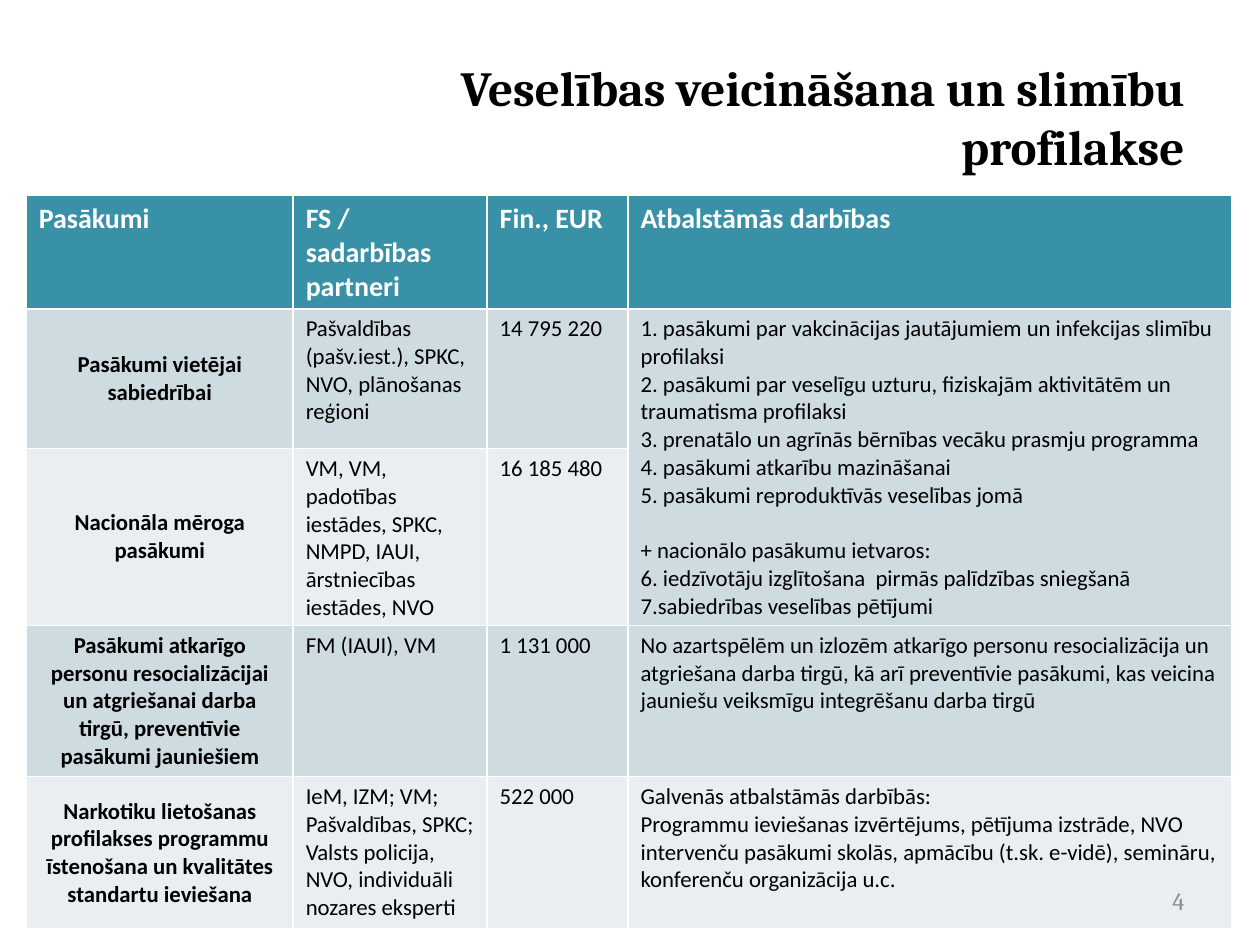
import pptx
import pptx.util
import pptx.dml.color
import pptx.enum.text

Cm = pptx.util.Cm
Pt = pptx.util.Pt
RGBColor = pptx.dml.color.RGBColor
ALIGN = pptx.enum.text.PP_ALIGN
ANCHOR = pptx.enum.text.MSO_ANCHOR

BLACK = RGBColor(0x00, 0x00, 0x00)
WHITE = RGBColor(0xFF, 0xFF, 0xFF)
GREY = RGBColor(0x8C, 0x8C, 0x8C)
TEAL = RGBColor(0x38, 0x91, 0xA7)
BANDS = (RGBColor(0xCE, 0xDC, 0xE1), RGBColor(0xE8, 0xEE, 0xF1))

WIDTHS = (5.38, 3.91, 2.84, 12.17)
HEIGHTS = (2.11, 2.82, 3.3, 3.05, 3.07)
HEADS = ("Pasākumi", "FS / sadarbības partneri", "Fin., EUR", "Atbalstāmās darbības")
ROWS = (
    ("Pasākumi vietējai sabiedrībai",
     "Pašvaldības (pašv.iest.), SPKC, NVO, plānošanas reģioni",
     "14 795 220",
     ("1. pasākumi par vakcinācijas jautājumiem un infekcijas slimību profilaksi",
      "2. pasākumi par veselīgu uzturu, fiziskajām aktivitātēm un traumatisma profilaksi",
      "3. prenatālo un agrīnās bērnības vecāku prasmju programma",
      "4. pasākumi atkarību mazināšanai",
      "5. pasākumi reproduktīvās veselības jomā",
      "+ nacionālo pasākumu ietvaros:",
      "6. iedzīvotāju izglītošana  pirmās palīdzības sniegšanā",
      "7.sabiedrības veselības pētījumi")),
    ("Nacionāla mēroga pasākumi",
     "VM, VM, padotības iestādes, SPKC, NMPD, IAUI, ārstniecības iestādes, NVO",
     "16 185 480",
     None),
    ("Pasākumi atkarīgo personu resocializācijai un atgriešanai darba tirgū, "
     "preventīvie pasākumi jauniešiem",
     "FM (IAUI), VM",
     "1 131 000",
     "No azartspēlēm un izlozēm atkarīgo personu resocializācija un atgriešana darba "
     "tirgū, kā arī preventīvie pasākumi, kas veicina jauniešu veiksmīgu integrēšanu "
     "darba tirgū"),
    ("Narkotiku lietošanas profilakses programmu īstenošana un kvalitātes standartu "
     "ieviešana",
     "IeM, IZM; VM; Pašvaldības, SPKC; Valsts policija, NVO, individuāli nozares eksperti",
     "522 000",
     ("Galvenās atbalstāmās darbībās:",
      "Programmu ieviešanas izvērtējums, pētījuma izstrāde, NVO intervenču pasākumi "
      "skolās, apmācību (t.sk. e-vidē), semināru, konferenču organizācija u.c.")),
)


def write(frame, text, size=13, font="Calibri", color=BLACK, bold=False, align=ALIGN.LEFT):
    """Fill a text frame with one paragraph per line of text."""
    lines = (text,) if isinstance(text, str) else text
    for i, line in enumerate(lines):
        para = frame.paragraphs[0] if i == 0 else frame.add_paragraph()
        para.alignment = align
        if line.startswith("+"):
            para.space_before = Pt(15.9)
        run = para.add_run()
        run.text = line
        run.font.size = Pt(size)
        run.font.name = font
        run.font.bold = bold
        run.font.color.rgb = color


def add_label(slide, text, left, top, width, height, **style):
    """Add a right-aligned text box centred in height."""
    box = slide.shapes.add_textbox(Cm(left), Cm(top), Cm(width), Cm(height))
    frame = box.text_frame
    frame.word_wrap = True
    frame.vertical_anchor = ANCHOR.MIDDLE
    write(frame, text, font="Cambria", align=ALIGN.RIGHT, **style)


def set_cell(cell, text, fill, **style):
    """Colour a table cell and write its text."""
    cell.fill.solid()
    cell.fill.fore_color.rgb = fill
    if text:
        write(cell.text_frame, text, **style)


def add_grid(slide):
    """Add the table of measures."""
    frame = slide.shapes.add_table(len(HEIGHTS), len(WIDTHS), Cm(0.53), Cm(3.94),
                                   Cm(sum(WIDTHS)), Cm(sum(HEIGHTS)))
    grid = frame.table
    for col, width in zip(grid.columns, WIDTHS):
        col.width = Cm(width)
    for row, height in zip(grid.rows, HEIGHTS):
        row.height = Cm(height)
    for c, head in enumerate(HEADS):
        set_cell(grid.cell(0, c), head, TEAL, size=16, color=WHITE, bold=True)
    for r, row in enumerate(ROWS, 1):
        fill = BANDS[(r - 1) % 2]
        for c, text in enumerate(row):
            cell = grid.cell(r, c)
            if c == 0:
                cell.vertical_anchor = ANCHOR.MIDDLE
                set_cell(cell, text, fill, bold=True, align=ALIGN.CENTER)
            else:
                set_cell(cell, text, fill)
    grid.cell(1, 3).merge(grid.cell(2, 3))


def main():
    """Build the slide and save it."""
    deck = pptx.Presentation()
    deck.slide_width, deck.slide_height = Cm(25.4), Cm(19.05)
    slide = deck.slides.add_slide(deck.slide_layouts[6])
    add_label(slide, "Veselības veicināšana un slimību profilakse",
              5.08, 0.76, 19.05, 3.18, size=28, bold=True)
    add_grid(slide)
    add_label(slide, "4", 18.21, 17.65, 5.92, 1.02, size=14, color=GREY)
    deck.save("out.pptx")


if __name__ == "__main__":
    main()
